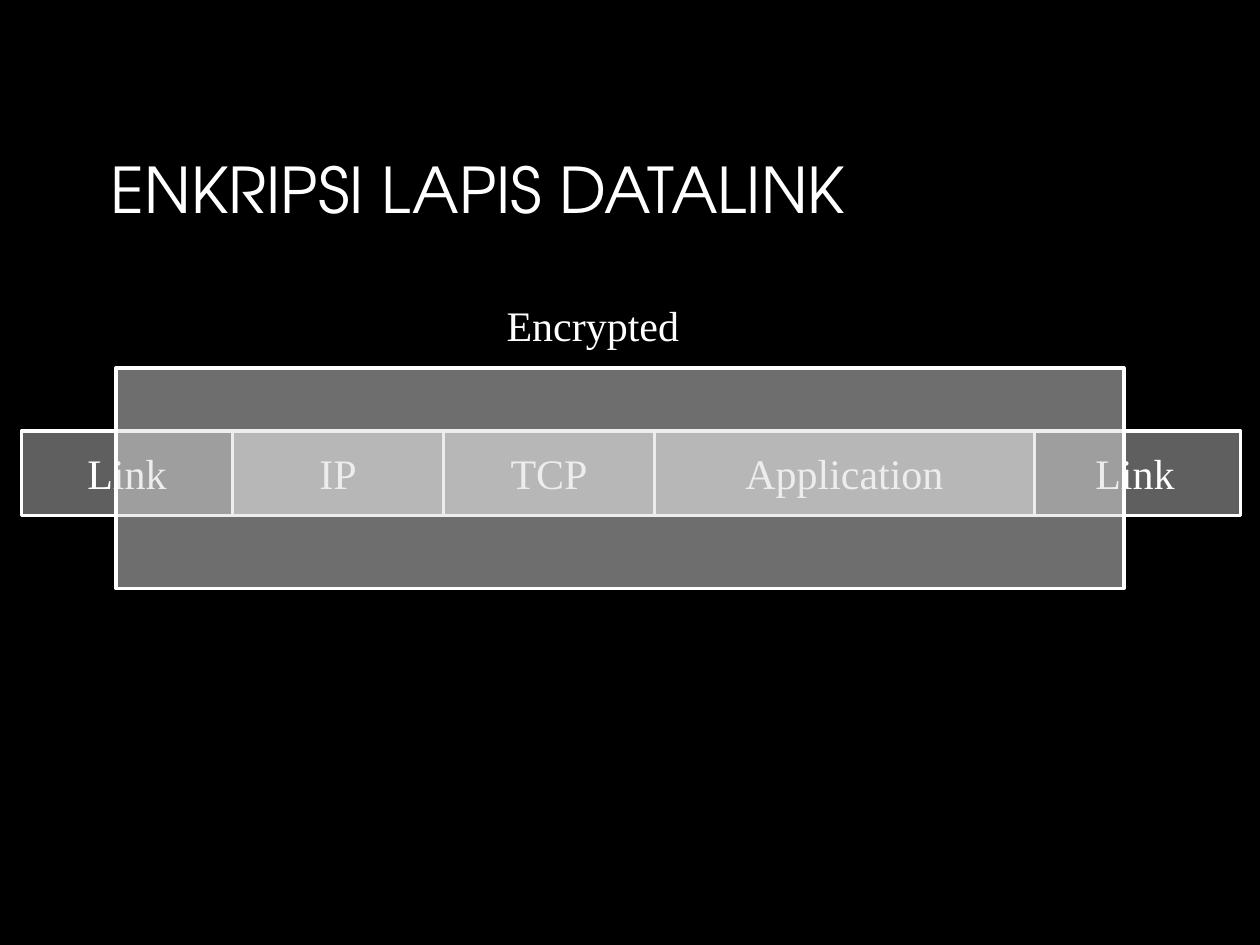
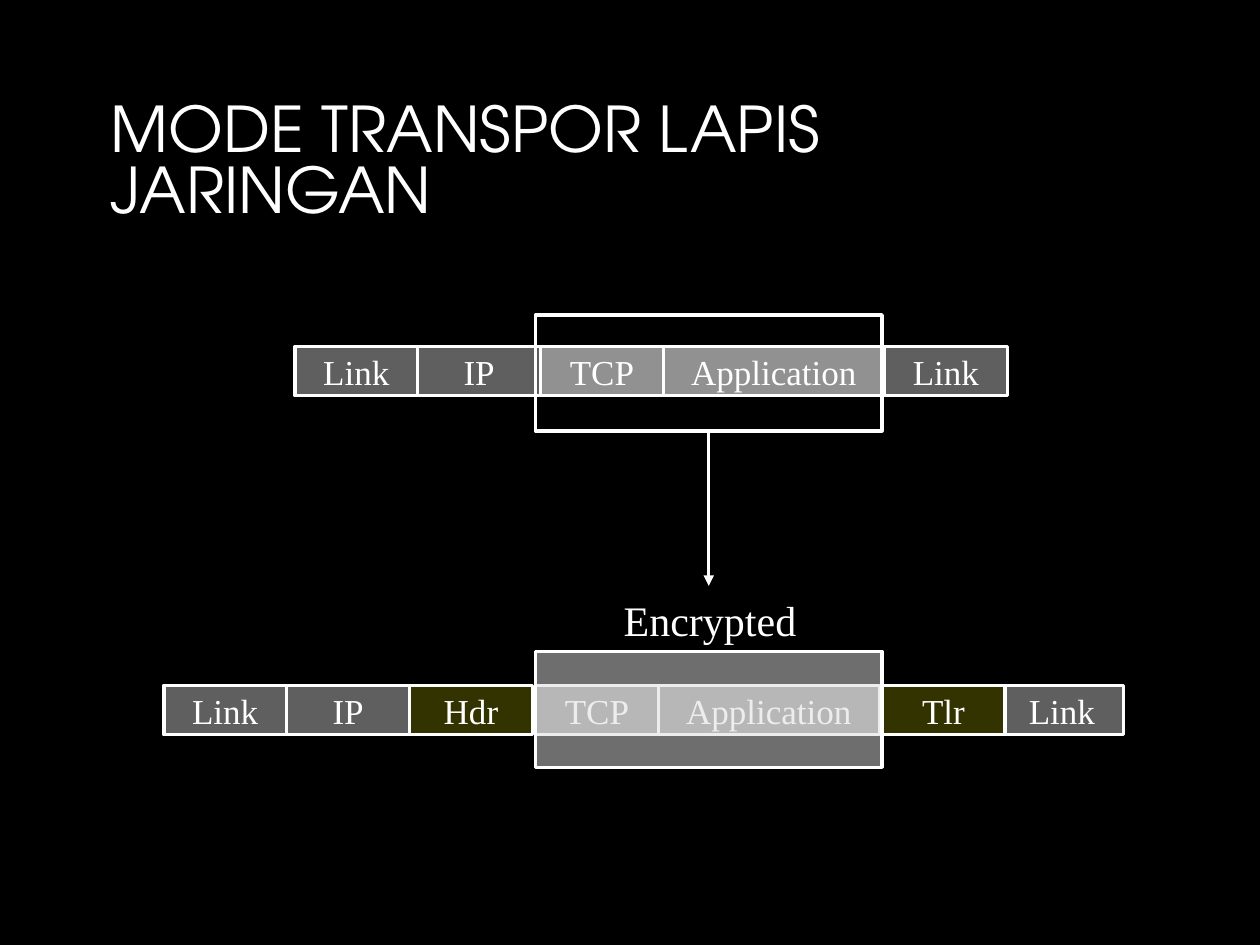
from lxml import etree
from pptx import Presentation
from pptx.dml.color import RGBColor
from pptx.enum import shapes, text
from pptx.oxml.ns import qn
from pptx.util import Inches, Pt

COLORS = {"ground": "000000", "ink": "FFFFFF", "header": "5F5F5F",
          "payload": "919191", "added": "333300", "cover": "DDDDDD"}
FIELDS = {"Link": "header", "IP": "header", "TCP": "payload",
          "Application": "payload", "Hdr": "added", "Tlr": "added"}
TITLE_FONT, BODY_FONT = "TeX Gyre Adventor", "Times New Roman"
TITLE_AREA = (0.75, 0.53, 8.5, 1.33)
LABEL = "Encrypted"
LABEL_SIZE = (1.57, 0.5)
FIELD_RATIO = 2.5
APPLICATION_RATIO = 4.5

DATALINK = {
    "title": "ENKRIPSI LAPIS DATALINK",
    "packet": {"top": 3.42, "height": 0.67, "size": 24},
    "fields": [(8.17, ["Link"]), (0.17, ["Link", "IP", "TCP", "Application"])],
    "overrides": {"IP": "payload"},
    "cover": (0.92, 2.92, 8, 1.75),
    "label": (3.92, 2.33),
}
TRANSPORT = {
    "title": "MODE TRANSPOR LAPIS JARINGAN",
    "plain": {"top": 2.75, "height": 0.39, "size": 20},
    "plain_fields": [(7.02, ["Link"]), (2.34, ["Link", "IP", "TCP", "Application"])],
    "packet": {"top": 5.44, "height": 0.39, "size": 20},
    "fields": [(7.94, ["Link"]), (1.3, ["Link", "IP"]), (4.25, ["TCP", "Application"])],
    "added_fields": [(3.25, ["Hdr"]), (7, ["Tlr"])],
    "selection": (4.25, 2.5, 2.75, 0.92),
    "cover": (4.25, 5.17, 2.75, 0.92),
    "label": (4.85, 4.67),
    "arrow_end": 4.65,
}


def color(name):
    return RGBColor.from_string(COLORS[name])


def apply(target, values):
    for key, value in values.items():
        setattr(target, key, value)


def write(shape, words, size, font=BODY_FONT, align=text.PP_ALIGN.CENTER, frame=None):
    apply(shape.text_frame, {"text": words, "word_wrap": False,
                             "vertical_anchor": text.MSO_ANCHOR.MIDDLE, **(frame or {})})
    paragraph = shape.text_frame.paragraphs[0]
    paragraph.alignment = align
    apply(paragraph.font, {"name": font, "size": Pt(size), "bold": False})
    paragraph.font.color.rgb = color("ink")
    return paragraph


def outline(shape):
    shape.line.color.rgb = color("ink")
    shape.line.width = Pt(2)


def add_box(slide, area, fill=None, alpha=None):
    box = slide.shapes.add_shape(shapes.MSO_SHAPE.RECTANGLE, *map(Inches, area))
    box.shadow.inherit = False
    outline(box)
    if fill:
        box.fill.solid()
        box.fill.fore_color.rgb = color(fill)
    else:
        box.fill.background()
    if alpha:
        tone = box.fill._xPr.find(".//" + qn("a:srgbClr"))
        etree.SubElement(tone, qn("a:alpha")).set("val", str(alpha * 1000))
    return box


def add_fields(slide, packet, groups, overrides=None):
    fills = {**FIELDS, **(overrides or {})}
    height = packet["height"]
    for left, names in groups:
        for name in names:
            width = height * (APPLICATION_RATIO if name == "Application" else FIELD_RATIO)
            field = add_box(slide, (left, packet["top"], width, height), fills[name])
            write(field, name, packet["size"])
            left += width


def add_label(slide, corner):
    label = slide.shapes.add_textbox(*map(Inches, corner + LABEL_SIZE))
    write(label, LABEL, 24, frame={"auto_size": text.MSO_AUTO_SIZE.SHAPE_TO_FIT_TEXT})


def add_arrow(slide, source, end):
    middle = source.left + source.width // 2
    arrow = slide.shapes.add_connector(shapes.MSO_CONNECTOR.STRAIGHT, middle,
                                       source.top + source.height, middle, Inches(end))
    arrow.begin_connect(source, 2)
    outline(arrow)
    etree.SubElement(arrow.line._get_or_add_ln(), qn("a:tailEnd")).set("type", "triangle")
    etree.SubElement(arrow._element.spPr, qn("a:effectLst"))


def add_titled_slide(deck, words):
    slide = deck.slides.add_slide(deck.slide_layouts[5])
    title = slide.shapes.title
    apply(title, dict(zip(("left", "top", "width", "height"), map(Inches, TITLE_AREA))))
    frame = {"word_wrap": True, "auto_size": text.MSO_AUTO_SIZE.NONE,
             "vertical_anchor": text.MSO_ANCHOR.BOTTOM,
             "margin_left": Inches(0.13), "margin_right": Inches(0.13),
             "margin_top": Inches(0.07), "margin_bottom": Inches(0.07)}
    paragraph = write(title, words, 36, TITLE_FONT, text.PP_ALIGN.LEFT, frame)
    paragraph.line_spacing = 0.8
    return slide


def add_encrypted_packet(slide, content):
    add_fields(slide, content["packet"], content["fields"], content.get("overrides"))
    add_box(slide, content["cover"], "cover", 50)
    add_label(slide, content["label"])


def main():
    deck = Presentation()
    deck.slide_width, deck.slide_height = Inches(10), Inches(7.5)
    ground = deck.slide_master.background.fill
    ground.solid()
    ground.fore_color.rgb = color("ground")

    add_encrypted_packet(add_titled_slide(deck, DATALINK["title"]), DATALINK)

    transport = add_titled_slide(deck, TRANSPORT["title"])
    add_fields(transport, TRANSPORT["plain"], TRANSPORT["plain_fields"])
    add_encrypted_packet(transport, TRANSPORT)
    selection = add_box(transport, TRANSPORT["selection"])
    add_arrow(transport, selection, TRANSPORT["arrow_end"])
    add_fields(transport, TRANSPORT["packet"], TRANSPORT["added_fields"])

    deck.save("out.pptx")


if __name__ == "__main__":
    main()
